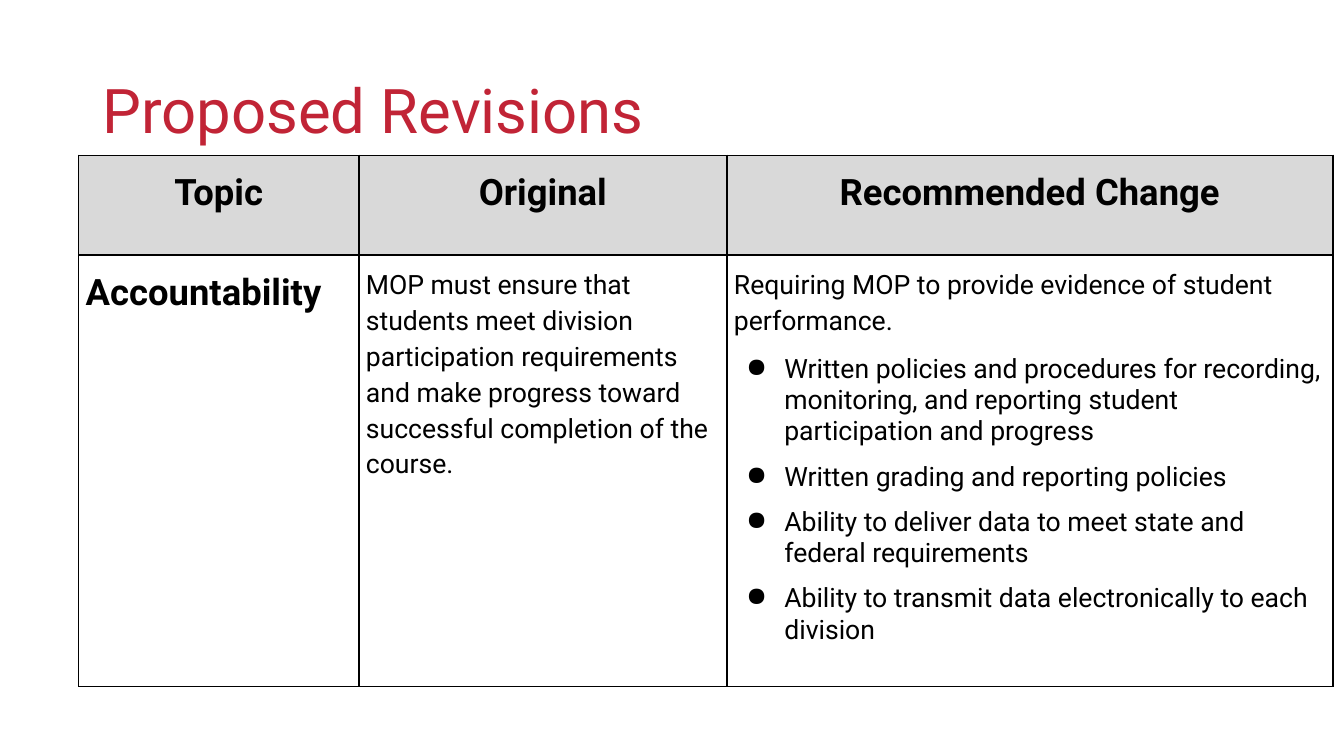
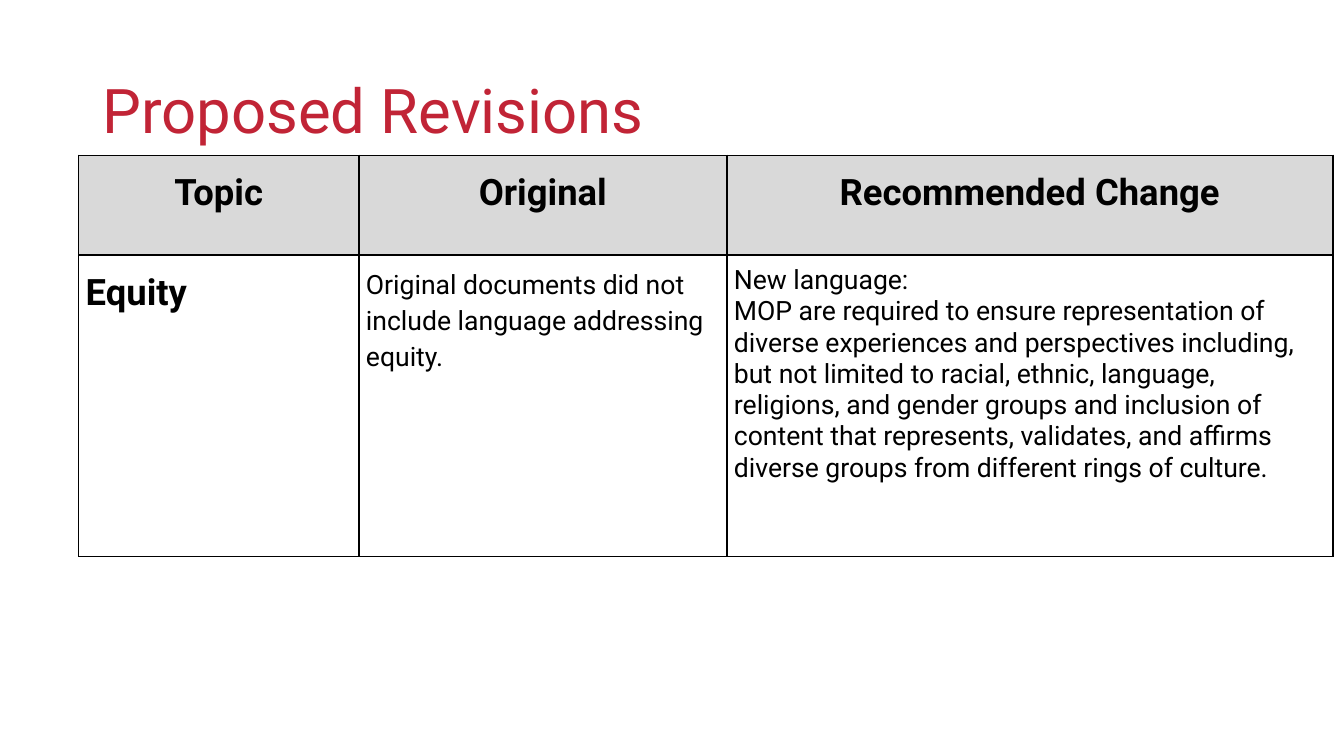
from dataclasses import dataclass

import pptx
import pptx.dml.color
import pptx.enum.text
import pptx.oxml
import pptx.oxml.ns
import pptx.util

Pt = pptx.util.Pt
Inches = pptx.util.Inches
Align = pptx.enum.text.PP_ALIGN
Anchor = pptx.enum.text.MSO_ANCHOR
NS = pptx.oxml.ns.nsdecls("a")

WIDE, HIGH = Inches(13.33), Inches(7.5)


@dataclass(frozen=True)
class Theme:
    font: str = "Roboto"
    red: str = "C12436"
    ink: str = "000000"
    gray: str = "D9D9D9"
    title: float = 44
    head: float = 26
    body: float = 19
    rule: float = 1


@dataclass(frozen=True)
class Para:
    text: str
    lead: float = 1.0
    gap: float = 0
    dot: bool = False


@dataclass(frozen=True)
class Page:
    topic: str
    old: list[Para]
    new: list[Para]
    tall: float  # body row, percent of slide height


THEME = Theme()
TITLE = "Proposed Revisions"
HEADS = ("Topic", "Original", "Recommended Change")
COLS = (20.86, 27.38, 45.09)  # percent of slide width
LEFT, TOP, HEAD = 5.85, 20.53, 13.2

PAGES = [
    Page(
        "Accountability",
        [Para("MOP must ensure that students meet division participation requirements "
              "and make progress toward successful completion of the course.", 1.15)],
        [
            Para("Requiring MOP to provide evidence of student performance.", 1.15),
            Para("Written policies and procedures for recording, monitoring, and "
                 "reporting student participation and progress", gap=12, dot=True),
            Para("Written grading and reporting policies", gap=10, dot=True),
            Para("Ability to deliver data to meet state and federal requirements",
                 gap=10, dot=True),
            Para("Ability to transmit data electronically to each division",
                 gap=10, dot=True),
        ],
        57.07,
    ),
    Page(
        "Equity",
        [Para("Original documents did not include language addressing equity.", 1.15)],
        [
            Para("New language:"),
            Para("MOP are required to ensure representation of diverse experiences and "
                 "perspectives including, but not limited to racial, ethnic, language, "
                 "religions, and gender groups and inclusion of content that represents, "
                 "validates, and affirms diverse groups from different rings of culture."),
        ],
        39.87,
    ),
]


def across(share: float) -> int:
    return round(WIDE * share / 100)


def down(share: float) -> int:
    return round(HIGH * share / 100)


def color(code: str) -> pptx.dml.color.RGBColor:
    return pptx.dml.color.RGBColor.from_string(code)


def bullet(para) -> None:
    props = para._p.get_or_add_pPr()
    props.set("marL", str(Inches(0.5)))
    props.set("indent", str(Inches(-0.38)))
    for xml in (f'<a:buClr {NS}><a:srgbClr val="{THEME.ink}"/></a:buClr>',
                f'<a:buChar {NS} char="●"/>'):
        props.append(pptx.oxml.parse_xml(xml))


def write(frame, paras: list[Para], size: float, ink: str = THEME.ink,
          bold: bool = False, align=Align.LEFT) -> None:
    frame.text = "\n".join(item.text for item in paras)
    for para, item in zip(frame.paragraphs, paras):
        if item.dot:
            bullet(para)
        para.alignment = align
        para.line_spacing = item.lead
        para.space_before = Pt(item.gap)
        for run in para.runs:
            run.font.name, run.font.size = THEME.font, Pt(size)
            run.font.bold, run.font.color.rgb = bold, color(ink)


def border(cell) -> None:
    props = cell._tc.get_or_add_tcPr()
    for side in ("lnL", "lnR", "lnT", "lnB"):
        props.append(pptx.oxml.parse_xml(
            f'<a:{side} {NS} w="{Pt(THEME.rule)}"><a:solidFill>'
            f'<a:srgbClr val="{THEME.ink}"/></a:solidFill></a:{side}>'))


def style(cell, head: bool) -> None:
    cell.margin_left = cell.margin_right = Inches(0.07)
    cell.margin_top = cell.margin_bottom = Inches(0.1)
    cell.vertical_anchor = Anchor.TOP
    border(cell)
    if head:
        cell.fill.solid()
        cell.fill.fore_color.rgb = color(THEME.gray)
    else:
        cell.fill.background()


def heading(slide) -> None:
    box = slide.shapes.add_textbox(across(6.9), down(5.33), across(86.27), down(19.33))
    frame = box.text_frame
    frame.word_wrap = True
    frame.vertical_anchor = Anchor.MIDDLE
    write(frame, [Para(TITLE, 0.9)], THEME.title, THEME.red)


def grid(slide, page: Page) -> None:
    rows = (HEAD, page.tall)
    table = slide.shapes.add_table(
        len(rows), len(COLS), across(LEFT), down(TOP),
        across(sum(COLS)), down(sum(rows))).table
    table.first_row = table.horz_banding = False
    for col, share in zip(table.columns, COLS):
        col.width = across(share)
    for row, share in zip(table.rows, rows):
        row.height = down(share)

    # Header row
    for spot, name in enumerate(HEADS):
        cell = table.cell(0, spot)
        style(cell, True)
        write(cell.text_frame, [Para(name, 1.15)], THEME.head,
              bold=True, align=Align.CENTER)

    # Body row
    topic, *texts = (table.cell(1, spot) for spot in range(len(COLS)))
    style(topic, False)
    write(topic.text_frame, [Para(page.topic, 1.15)], THEME.head, bold=True)
    for cell, paras in zip(texts, (page.old, page.new)):
        style(cell, False)
        write(cell.text_frame, paras, THEME.body)


def main() -> None:
    deck = pptx.Presentation()
    deck.slide_width, deck.slide_height = WIDE, HIGH
    for page in PAGES:
        slide = deck.slides.add_slide(deck.slide_layouts[6])
        heading(slide)
        grid(slide, page)
    deck.save("out.pptx")


if __name__ == "__main__":
    main()
